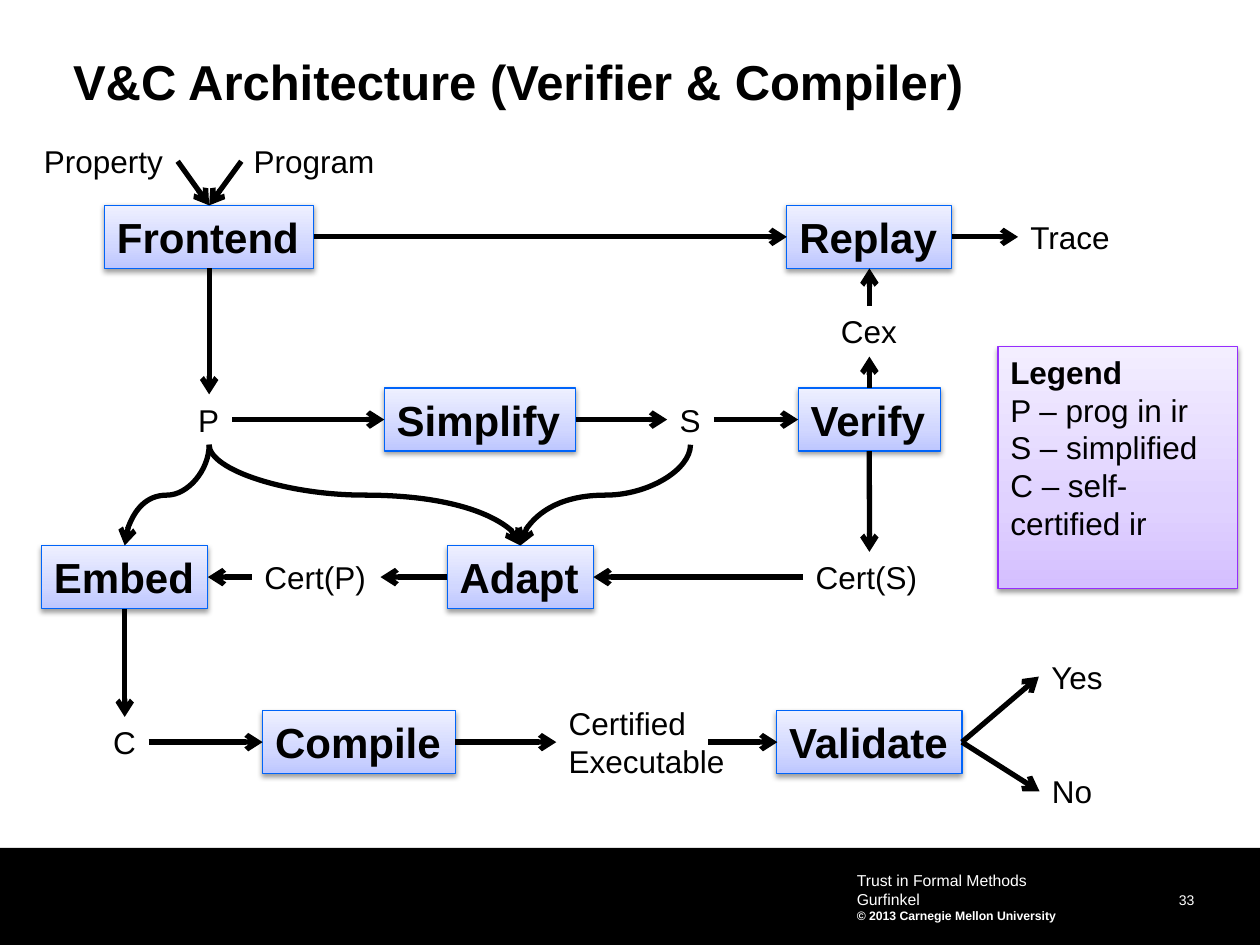
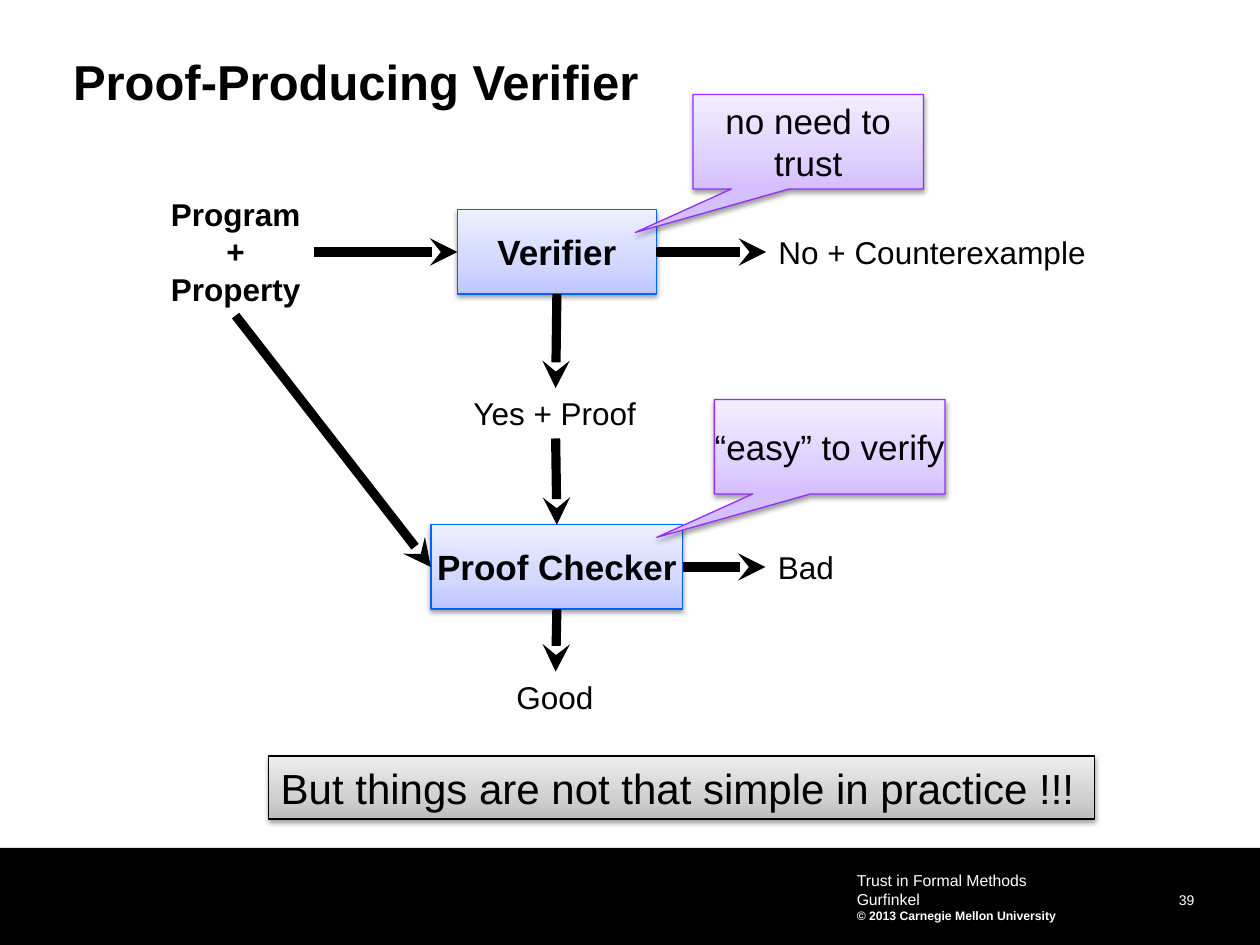
import pptx
import pptx.util
import pptx.dml.color
import pptx.enum.shapes
import pptx.enum.text
import pptx.oxml.ns
from lxml import etree

Inches, Pt = pptx.util.Inches, pptx.util.Pt
SHAPE = pptx.enum.shapes.MSO_SHAPE
CONNECTOR = pptx.enum.shapes.MSO_CONNECTOR
ALIGN = pptx.enum.text.PP_ALIGN
ANCHOR = pptx.enum.text.MSO_ANCHOR
AUTO = pptx.enum.text.MSO_AUTO_SIZE
qn = pptx.oxml.ns.qn

FONT = "Arial"
COLORS = {"ink": "000000", "paper": "FFFFFF", "blue": "0064F9", "purple": "962DFE"}
# Gradient stops at 0, 35 and 100 percent, running upwards
GRADIENTS = {
    "blue": ("BDC6FF", "D1D7FF", "EEF0FF"),
    "purple": ("D4BFFF", "E0D2FF", "F3EEFF"),
    "ink": ("BDBDBD", "D1D1D1", "EEEEEE"),
}
SIDES = {"top": 0, "left": 1, "bottom": 2, "right": 3}

FOOTER = [("Trust in Formal Methods", 9, False), ("Gurfinkel", 9, False),
          ("© 2013 Carnegie Mellon University", 7, True)]

# Nodes: text, centre x, centre y, width
ROWS = {"input": 1.28, "front": 1.88, "cex": 2.63, "ir": 3.33, "cert": 4.58, "out": 5.89}
ARCHITECTURE = {
    "title": "V&C Architecture (Verifier & Compiler)",
    "page": 33,
    "boxes": [
        ("Frontend", 1.66, ROWS["front"], 1.66), ("Replay", 6.9, ROWS["front"], 1.31),
        ("Simplify", 3.81, ROWS["ir"], 1.52), ("Verify", 6.9, ROWS["ir"], 1.13),
        ("Embed", 0.99, ROWS["cert"], 1.32), ("Adapt", 4.13, ROWS["cert"], 1.16),
        ("Compile", 2.85, ROWS["out"], 1.53), ("Validate", 6.9, ROWS["out"], 1.47),
    ],
    "labels": [
        ("Property", 0.83, ROWS["input"], 1.16), ("Program", 2.5, ROWS["input"], 1.17),
        ("Trace", 8.5, ROWS["front"], 0.84), ("Cex", 6.9, ROWS["cex"], 0.65),
        ("P", 1.66, ROWS["ir"], 0.37), ("S", 5.48, ROWS["ir"], 0.37),
        ("Cert(P)", 2.51, ROWS["cert"], 1.02), ("Cert(S)", 6.9, ROWS["cert"], 1.05),
        ("C", 0.99, ROWS["out"], 0.38),
        ("Certified\nExecutable", 5.14, ROWS["out"], 1.45),
        ("Yes", 8.55, 5.37, 0.61), ("No", 8.51, 6.28, 0.52),
    ],
    "links": [
        ("Property", "right", "Frontend", "top"), ("Program", "left", "Frontend", "top"),
        ("Frontend", "right", "Replay", "left"), ("Replay", "right", "Trace", "left"),
        ("Frontend", "bottom", "P", "top"), ("P", "right", "Simplify", "left"),
        ("Simplify", "right", "S", "left"), ("S", "right", "Verify", "left"),
        ("Verify", "top", "Cex", "bottom"), ("Cex", "top", "Replay", "bottom"),
        ("Verify", "bottom", "Cert(S)", "top"), ("Cert(S)", "left", "Adapt", "right"),
        ("Adapt", "left", "Cert(P)", "right"), ("Cert(P)", "left", "Embed", "right"),
        ("Embed", "bottom", "C", "top"), ("C", "right", "Compile", "left"),
        ("Compile", "right", "Certified\nExecutable", "left"),
        ("Validate", "right", "Yes", "left"), ("Validate", "right", "No", "left"),
    ],
    "curves": [("P", "Adapt"), ("P", "Embed"), ("S", "Adapt")],
    "legend": [("Legend", 18, True), ("P – prog in ir", 18, False),
               ("S – simplified", 18, False), ("C – self-certified ir", 18, False)],
}
EXECUTABLE_ARROW = (5.62, 5.89, 6.17, 5.89)

INPUTS = "Program\n+\nProperty"
PROOF = {
    "title": "Proof-Producing Verifier",
    "page": 39,
    "boxes": [("Verifier", 4.42, 2, 1.58), ("Proof Checker", 4.42, 4.5, 2)],
    "labels": [("No + Counterexample", 7.41, 2, 2.66), ("Yes + Proof", 4.41, 3.28, 1.5),
               ("Good", 4.41, 5.53, 0.82), ("Bad", 6.4, 4.5, 0.65)],
    "inputs": (INPUTS, 1.87, 2, 1.24),
    "links": [
        (INPUTS, "right", "Verifier", "left"),
        (INPUTS, "bottom", "Proof Checker", "left"),
        ("Verifier", "right", "No + Counterexample", "left"),
        ("Verifier", "bottom", "Yes + Proof", "top"),
        ("Yes + Proof", "bottom", "Proof Checker", "top"),
        ("Proof Checker", "right", "Bad", "left"),
        ("Proof Checker", "bottom", "Good", "top"),
    ],
    "callouts": [("no need to trust", 5.5, 0.75), ("“easy” to verify", 5.67, 3.17)],
    "banner": "But things are not that simple in practice !!!",
}


def rgb(name):
    return pptx.dml.color.RGBColor.from_string(COLORS[name])


def write(sp, lines, color="ink", align=ALIGN.LEFT, anchor=ANCHOR.TOP,
          inset=None, wrap=False, grow=True, spacing=None):
    """Fill a shape with (text, size, bold) paragraphs."""
    tf = sp.text_frame
    tf.word_wrap = wrap
    tf.auto_size = AUTO.SHAPE_TO_FIT_TEXT if grow else AUTO.NONE
    tf.vertical_anchor = anchor
    if inset is not None:
        tf.margin_left = tf.margin_top = tf.margin_right = tf.margin_bottom = Inches(inset)
    for i, (text, size, bold) in enumerate(lines):
        p = tf.add_paragraph() if i else tf.paragraphs[0]
        p.alignment = align
        if spacing:
            p.line_spacing = spacing
        r = p.add_run()
        r.text = text
        r.font.name, r.font.size, r.font.bold = FONT, Pt(size), bold
        r.font.color.rgb = rgb(color)


def textbox(slide, at, lines, **style):
    sp = slide.shapes.add_textbox(*map(Inches, at))
    write(sp, lines, **style)
    return sp


def panel(slide, at, color, lines, kind=SHAPE.RECTANGLE, **style):
    """Add a gradient shape with a thin outline and a soft shadow."""
    sp = slide.shapes.add_shape(kind, *map(Inches, at))
    sp.fill.gradient()
    grad = sp._element.spPr.find(qn("a:gradFill"))
    for child in list(grad):
        grad.remove(child)
    stops = etree.SubElement(grad, qn("a:gsLst"))
    for pos, value in zip((0, 35, 100), GRADIENTS[color]):
        stop = etree.SubElement(stops, qn("a:gs"), pos=str(pos * 1000))
        etree.SubElement(stop, qn("a:srgbClr"), val=value)
    etree.SubElement(grad, qn("a:lin"), ang=str(270 * 60000), scaled="0")
    sp.line.color.rgb = rgb(color)
    sp.line.width = Pt(0.75)
    sp.shadow.inherit = False
    shadow = etree.SubElement(
        sp._element.spPr.find(qn("a:effectLst")), qn("a:outerShdw"),
        blurRad=str(Pt(3.1)), dist=str(Pt(1.6)), dir=str(90 * 60000), rotWithShape="0")
    black = etree.SubElement(shadow, qn("a:srgbClr"), val=COLORS["ink"])
    etree.SubElement(black, qn("a:alpha"), val="38000")
    write(sp, lines, **style)
    return sp


def centred(cx, cy, w, h):
    return cx - w / 2, cy - h / 2, w, h


def label(slide, text, cx, cy, w, bold=False, **style):
    lines = [(line, 18, bold) for line in text.split("\n")]
    height = 0.4 + 0.305 * (len(lines) - 1)
    return textbox(slide, centred(cx, cy, w, height), lines, **style)


def add_nodes(slide, content, box_height, box_size, **box_style):
    nodes = {}
    for text, cx, cy, w in content["boxes"]:
        nodes[text] = panel(slide, centred(cx, cy, w, box_height), "blue",
                            [(text, box_size, True)], **box_style)
    for item in content["labels"]:
        nodes[item[0]] = label(slide, *item)
    return nodes


def arrow(slide, width, head, ends=(0, 0, 0, 0), kind=CONNECTOR.STRAIGHT):
    c = slide.shapes.add_connector(kind, *map(Inches, ends))
    c.line.color.rgb = rgb("ink")
    c.line.width = Pt(width)
    spPr = c._element.spPr
    etree.SubElement(spPr.find(qn("a:ln")), qn("a:tailEnd"), type=head)
    etree.SubElement(spPr, qn("a:effectLst"))
    return c


def link(c, source, side, target, target_side):
    c.begin_connect(source, SIDES[side])
    c.end_connect(target, SIDES[target_side])


def curve_down(slide, source, target, width, head):
    """Join a bottom side to a top side with an S curve turned upright."""
    c = arrow(slide, width, head, kind=CONNECTOR.CURVE)
    link(c, source, "bottom", target, "top")
    x1, y1, x2, y2 = c.begin_x, c.begin_y, c.end_x, c.end_y
    drop, reach = y2 - y1, abs(x2 - x1)
    c.left, c.top = (x1 + x2 - drop) // 2, (y1 + y2 - reach) // 2
    c.width, c.height = drop, reach
    rightward = x2 > x1
    xfrm = c._element.spPr.find(qn("a:xfrm"))
    xfrm.set("rot", str((270 if rightward else 90) * 60000))
    xfrm.set("flipH", "1" if rightward else "0")


def add_slide(prs, content):
    slide = prs.slides.add_slide(prs.slide_layouts[5])
    band = slide.shapes.add_shape(SHAPE.RECTANGLE, *map(Inches, (0, 6.73, 10, 0.77)))
    band.shadow.inherit = False
    band.fill.solid()
    band.fill.fore_color.rgb = rgb("ink")
    band.line.fill.background()
    footer = {"color": "paper", "anchor": ANCHOR.MIDDLE, "wrap": True}
    textbox(slide, (8.56, 7.03, 0.92, 0.18), [(str(content["page"]), 8, False)],
            align=ALIGN.RIGHT, inset=0, spacing=Pt(13), **footer)
    textbox(slide, (6.75, 6.86, 2.5, 0.52), FOOTER, inset=0.05, **footer)
    title = slide.shapes.title
    title.left, title.top, title.width, title.height = map(Inches, (0.58, 0.46, 8.92, 0.43))
    write(title, [(content["title"], 28, True)], inset=0, wrap=True, grow=False, spacing=0.9)
    return slide


def build_architecture(prs):
    slide = add_slide(prs, ARCHITECTURE)
    nodes = add_nodes(slide, ARCHITECTURE, 0.5, 24)
    for source, side, target, target_side in ARCHITECTURE["links"]:
        link(arrow(slide, 3, "arrow"), nodes[source], side, nodes[target], target_side)
    arrow(slide, 3, "arrow", EXECUTABLE_ARROW)
    for source, target in ARCHITECTURE["curves"]:
        curve_down(slide, nodes[source], nodes[target], 3, "arrow")
    panel(slide, (7.92, 2.75, 1.9, 1.92), "purple", ARCHITECTURE["legend"],
          wrap=True, grow=False)


def build_proof(prs):
    slide = add_slide(prs, PROOF)
    middle = {"align": ALIGN.CENTER, "anchor": ANCHOR.MIDDLE, "inset": 0, "grow": False}
    nodes = add_nodes(slide, PROOF, 0.67, 20, **middle)
    nodes[INPUTS] = label(slide, *PROOF["inputs"], bold=True, align=ALIGN.CENTER)
    for source, side, target, target_side in PROOF["links"]:
        link(arrow(slide, 5.25, "stealth"), nodes[source], side, nodes[target], target_side)
    for text, x, y in PROOF["callouts"]:
        sp = panel(slide, (x, y, 1.83, 0.75), "purple", [(text, 20, False)],
                   kind=SHAPE.RECTANGULAR_CALLOUT, wrap=True, **middle)
        sp.adjustments[0], sp.adjustments[1] = -0.75, 0.96
    panel(slide, (2.13, 6, 6.56, 0.5), "ink", [(PROOF["banner"], 24, False)])


def main():
    prs = pptx.Presentation()
    prs.slide_width, prs.slide_height = Inches(10), Inches(7.5)
    build_architecture(prs)
    build_proof(prs)
    prs.save("out.pptx")


if __name__ == "__main__":
    main()
